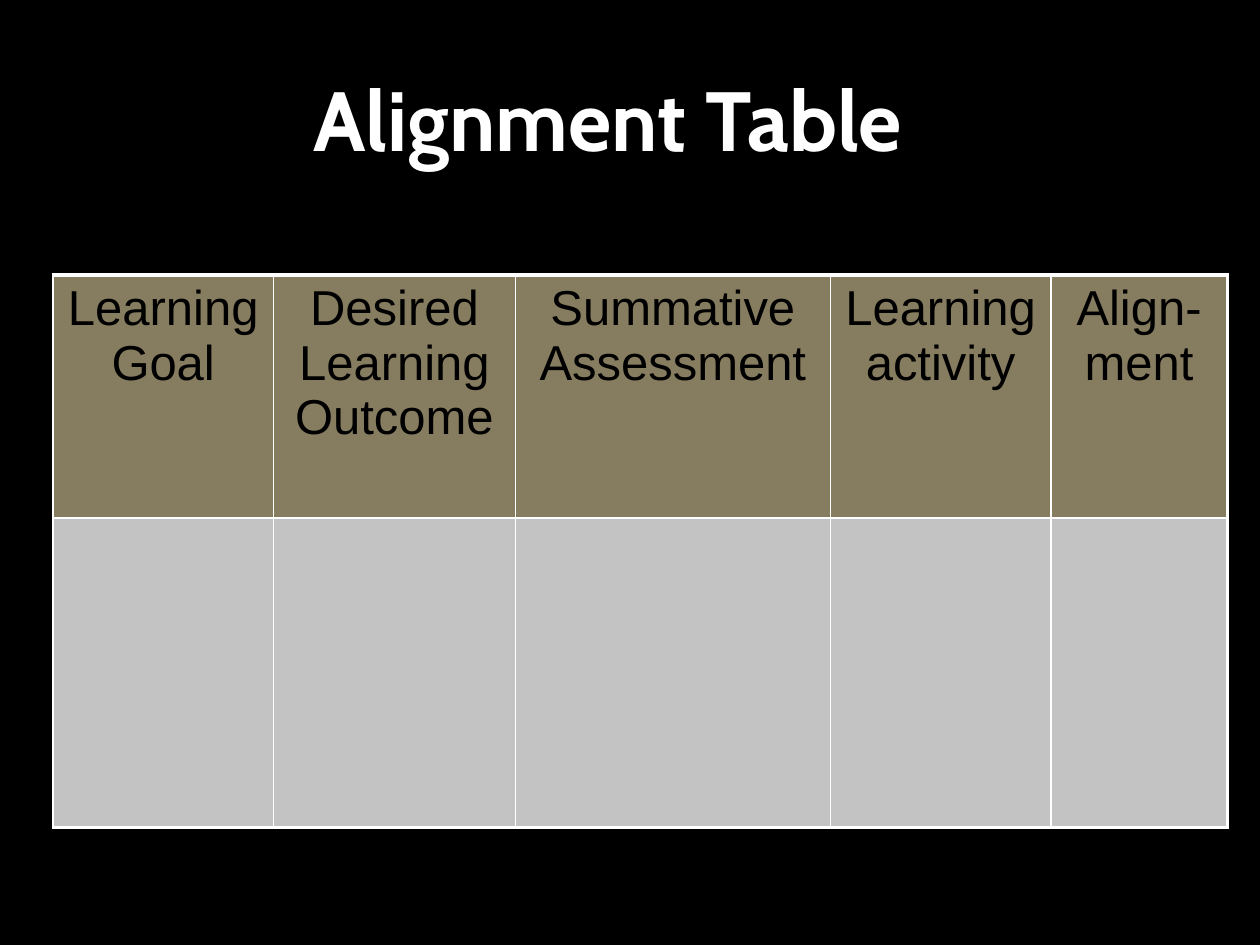
"""Build the alignment table slide."""
from copy import deepcopy
from dataclasses import dataclass

from lxml.etree import SubElement
from pptx import Presentation
from pptx.dml.color import RGBColor as RGB
from pptx.enum.text import MSO_ANCHOR as Anchor, MSO_AUTO_SIZE as AutoSize, PP_ALIGN as Align
from pptx.oxml.ns import qn
from pptx.util import Inches, Pt


@dataclass(frozen=True)
class Theme:
    back: RGB = RGB(0, 0, 0)
    light: RGB = RGB(255, 255, 255)
    ink: RGB = RGB(0, 0, 0)
    head: RGB = RGB.from_string("867C5F")
    body: RGB = RGB.from_string("C3C3C3")
    title_font: str = "Cabin"
    text_font: str = "Arial"
    title_size: float = 48
    text_size: float = 28
    thin: float = 1
    thick: float = 2.25


@dataclass(frozen=True)
class Column:
    label: str
    share: float


T = Theme()
W, H = Inches(10), Inches(7.5)
COLUMNS = [
    Column("Learning Goal", 0.175),
    Column("Desired Learning Outcome", 0.192),
    Column("Summative Assessment", 0.25),
    Column("Learning activity", 0.175),
    Column("Align-ment", 0.14),
]
ROW_SHARES = [0.257, 0.328]
ROW_FILLS = [T.head, T.body]


def add_run(p, text: str, font: str, size: float, color: RGB, bold: bool = False):
    """Append one formatted run to a paragraph."""
    r = p.add_run()
    r.text = text
    r.font.name, r.font.size, r.font.bold = font, Pt(size), bold
    r.font.color.rgb = color
    return r


def set_border(cell, side: str, width: float) -> None:
    """Draw one side of a cell as a solid line."""
    ln = SubElement(cell._tc.get_or_add_tcPr(), qn(f"a:ln{side}"), w=str(Pt(width)))
    fill = SubElement(ln, qn("a:solidFill"))
    SubElement(fill, qn("a:srgbClr"), val=str(T.light))


def add_title(s) -> None:
    """Place the heading, whose last line is a bare line break."""
    sp = s.shapes.title
    sp.left, sp.top, sp.width, sp.height = (
        int(W * 0.061), int(H * 0.124), int(W * 0.858), int(H * 0.167))
    tf = sp.text_frame
    tf.word_wrap, tf.auto_size, tf.vertical_anchor = True, AutoSize.NONE, Anchor.BOTTOM
    p = tf.paragraphs[0]
    p.alignment = Align.CENTER
    r = add_run(p, "Alignment Table ", T.title_font, T.title_size, T.light, True)
    p.add_line_break()
    p._p.find(qn("a:br")).append(deepcopy(r._r.rPr))
    end = SubElement(p._p, qn("a:endParaRPr"), sz=str(int(T.title_size * 100)))
    SubElement(end, qn("a:latin"), typeface=T.text_font)


def add_alignment_table(s) -> None:
    """Place the table with a header row and an empty row."""
    rows, cols = len(ROW_SHARES), len(COLUMNS)
    width = int(W * sum(c.share for c in COLUMNS))
    height = int(H * sum(ROW_SHARES))
    table = s.shapes.add_table(rows, cols, int(W * 0.042), int(H * 0.291), width, height).table
    table.first_row = table.horz_banding = False
    for j, column in enumerate(COLUMNS):
        table.columns[j].width = int(W * column.share)
    for i, share in enumerate(ROW_SHARES):
        table.rows[i].height = int(H * share)
        for j, column in enumerate(COLUMNS):
            cell = table.cell(i, j)
            outer = {"L": False, "R": j == cols - 1, "T": i == 0, "B": i == rows - 1}
            for side, is_outer in outer.items():
                set_border(cell, side, T.thick if is_outer else T.thin)
            cell.fill.solid()
            cell.fill.fore_color.rgb = ROW_FILLS[i]
            if i == 0:
                p = cell.text_frame.paragraphs[0]
                p.alignment = Align.CENTER
                add_run(p, column.label, T.text_font, T.text_size, T.ink)


def main() -> None:
    """Create the presentation and save it."""
    prs = Presentation()
    prs.slide_width, prs.slide_height = W, H
    s = prs.slides.add_slide(prs.slide_layouts[5])
    s.background.fill.solid()
    s.background.fill.fore_color.rgb = T.back
    add_title(s)
    add_alignment_table(s)
    prs.save("out.pptx")


if __name__ == "__main__":
    main()
